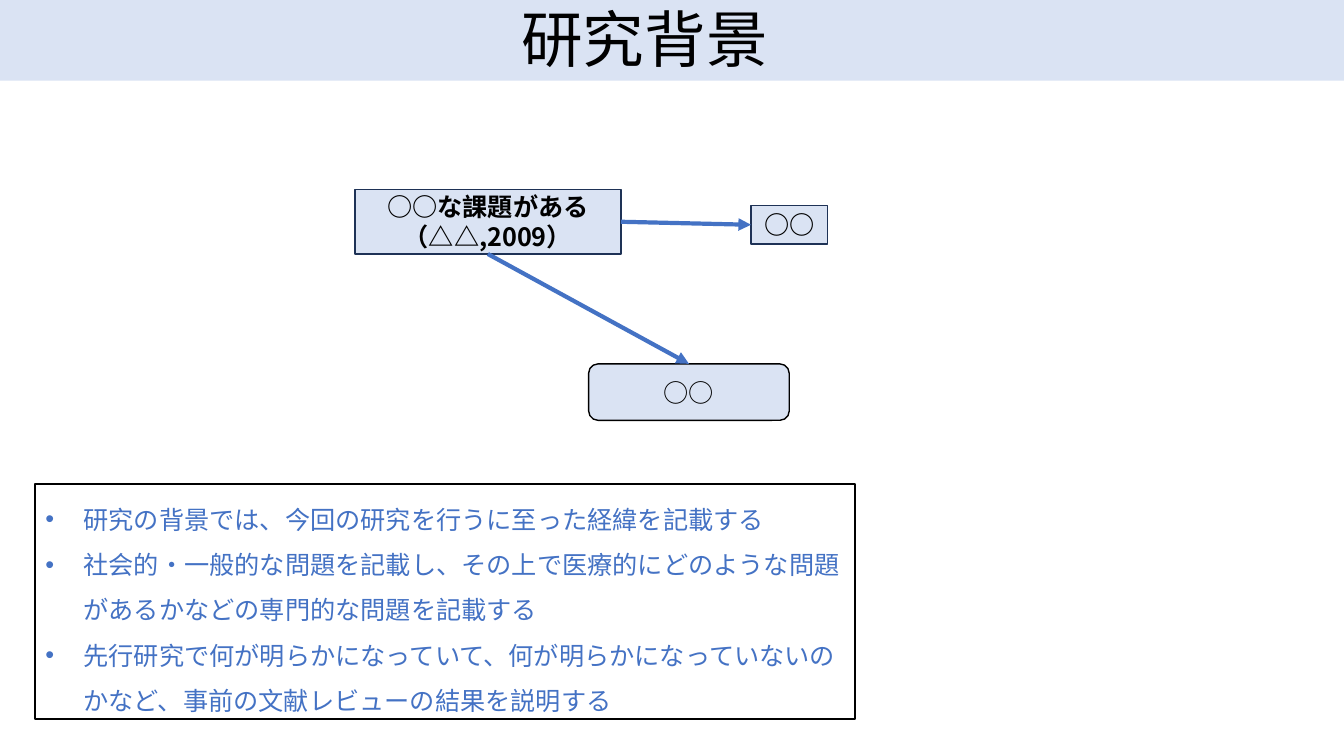
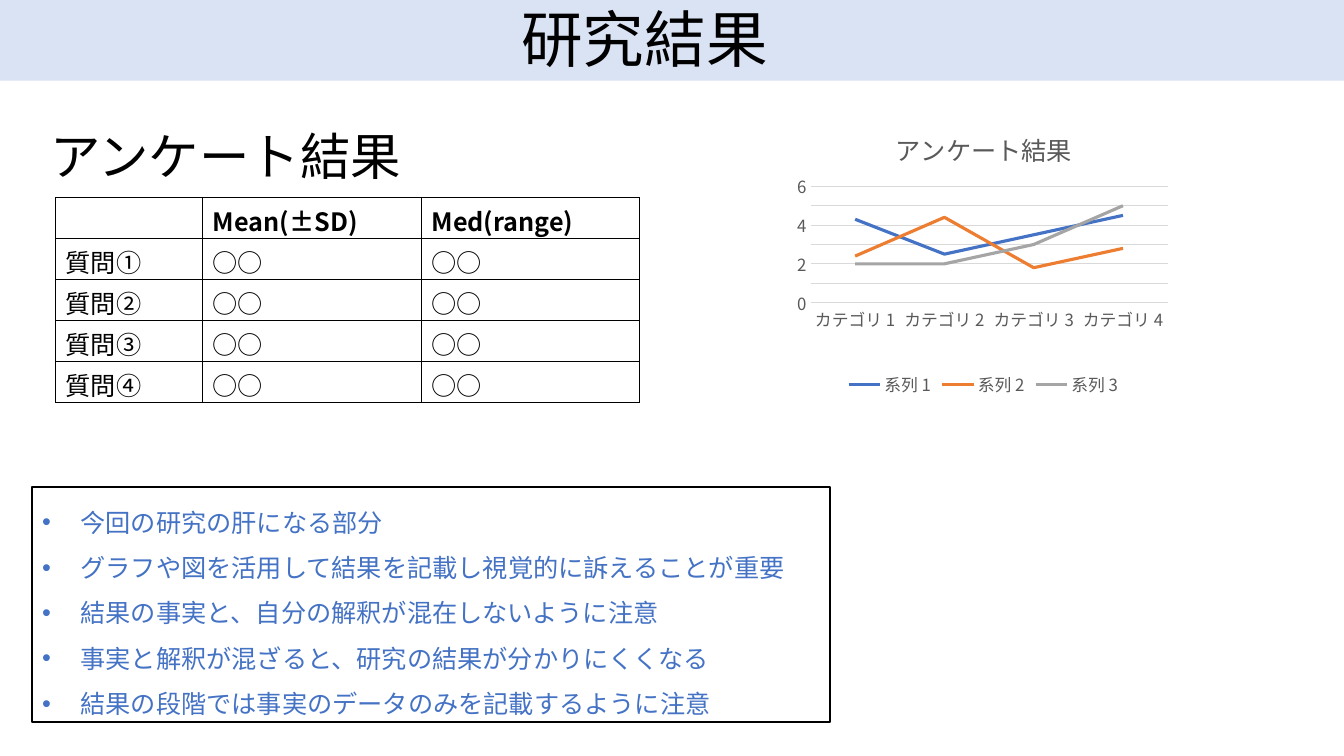
from lxml import etree
from pptx import Presentation
from pptx.chart.data import CategoryChartData
from pptx.dml.color import RGBColor
from pptx.enum.chart import XL_CHART_TYPE as CT, XL_LEGEND_POSITION as LP
from pptx.enum.chart import XL_MARKER_STYLE as MS, XL_TICK_MARK as TM
from pptx.enum.shapes import MSO_CONNECTOR as CONN, MSO_SHAPE as SHP
from pptx.enum.text import MSO_ANCHOR as ANC, MSO_AUTO_SIZE as AUTO, PP_ALIGN as AL
from pptx.oxml import parse_xml
from pptx.oxml.ns import nsdecls, qn
from pptx.util import Emu, Inches, Pt

FONT = "Noto Sans CJK JP"
C = {
    "pale": "DAE3F3", "navy": "1E3256", "blue": "4472C4", "orange": "ED7D31",
    "gray": "A5A5A5", "grid": "D9D9D9", "label": "595959",
    "black": "000000", "white": "FFFFFF",
}
W, H = Inches(13.333), Inches(7.5)
TOP, LEFT, BOTTOM, RIGHT = range(4)


def rgb(name):
    return RGBColor.from_string(C[name])


def share(x, y, w, h):
    return [Emu(round(n * full / 100)) for n, full in zip((x, y, w, h), (W, H, W, H))]


def set_font(font, size, color="black", bold=False):
    font.size, font.bold, font.name = Pt(size), bold, FONT
    font.color.rgb = rgb(color)


def set_line(line, color, width):
    line.color.rgb = rgb(color)
    line.width = Pt(width)


def style_text(tf, size, color="black", bold=False, align=AL.LEFT):
    for p in tf.paragraphs:
        p.alignment = align
        for r in p.runs:
            set_font(r.font, size, color, bold)
            ea = etree.SubElement(r.font._element, qn("a:ea"))
            ea.set("typeface", FONT)


def add_text(slide, at, text, size, color="black", align=AL.LEFT):
    sp = slide.shapes.add_textbox(*share(*at))
    tf = sp.text_frame
    tf.word_wrap = True
    tf.auto_size = AUTO.SHAPE_TO_FIT_TEXT
    tf.text = text
    style_text(tf, size, color, align=align)
    return sp


def add_box(slide, at, text="", kind=SHP.RECTANGLE, line=None, bold=False):
    sp = slide.shapes.add_shape(kind, *share(*at))
    sp.shadow.inherit = False
    sp.fill.solid()
    sp.fill.fore_color.rgb = rgb("pale")
    if line:
        set_line(sp.line, line, 1)
    else:
        sp.line.fill.background()
    tf = sp.text_frame
    tf.word_wrap = True
    tf.vertical_anchor = ANC.MIDDLE
    tf.text = text
    style_text(tf, 18, bold=bold, align=AL.CENTER)
    return sp


def add_arrow(slide, start, start_site, end, end_site):
    cx = slide.shapes.add_connector(CONN.STRAIGHT, 0, 0, 0, 0)
    cx.begin_connect(start, start_site)
    cx.end_connect(end, end_site)
    set_line(cx.line, "blue", 3)
    etree.SubElement(cx.line._get_or_add_ln(), qn("a:tailEnd")).set("type", "triangle")
    etree.SubElement(cx._element.spPr, qn("a:effectLst"))


def add_notes(slide, at, items):
    sp = add_text(slide, at, "\n".join(items), 18, "blue")
    set_line(sp.line, "black", 1.5)
    indent = Inches(0.38)
    for p in sp.text_frame.paragraphs:
        p.line_spacing = 1.5
        pPr = p._p.get_or_add_pPr()
        pPr.set("marL", str(indent))
        pPr.set("indent", str(-indent))
        etree.SubElement(pPr, qn("a:buFont")).set("typeface", "Arial")
        etree.SubElement(pPr, qn("a:buChar")).set("char", "•")


def style_cell(cell, text, bold):
    cell.text = text
    cell.margin_bottom = 0
    style_text(cell.text_frame, 18, bold=bold)
    tcPr = cell._tc.get_or_add_tcPr()
    for side in "LRTB":
        tcPr.append(parse_xml(
            f'<a:ln{side} {nsdecls("a")} w="{Pt(1)}"><a:solidFill>'
            f'<a:srgbClr val="{C["black"]}"/></a:solidFill></a:ln{side}>'))
    cell.fill.solid()
    cell.fill.fore_color.rgb = rgb("white")


def add_grid_table(slide, at, rows, col_shares):
    tbl = slide.shapes.add_table(len(rows), len(col_shares), *share(*at)).table
    for col, part in zip(tbl.columns, col_shares):
        col.width = Emu(round(W * part / 100))
    for i, row in enumerate(rows):
        for j, text in enumerate(row):
            style_cell(tbl.cell(i, j), text, bold=i == 0)


def place(parent, **edges):
    for old in parent.findall(qn("c:layout")):
        parent.remove(old)
    parts = "".join(f'<c:{k} val="{v}"/>' for k, v in edges.items())
    layout = parse_xml(f'<c:layout {nsdecls("c")}><c:manualLayout>{parts}'
                       '</c:manualLayout></c:layout>')
    tx = parent.find(qn("c:tx"))
    parent.insert(0 if tx is None else parent.index(tx) + 1, layout)


def add_line_chart(slide, at, title, cats, series):
    data = CategoryChartData()
    data.categories = cats
    for name, values, _ in series:
        data.add_series(name, values)
    chart = slide.shapes.add_chart(CT.LINE, *share(*at), data).chart
    set_font(chart.font, 12, "label")

    chart.has_title = True
    tf = chart.chart_title.text_frame
    tf.text = title
    style_text(tf, 18, "label", align=AL.CENTER)
    place(chart.chart_title._element, xMode="edge", yMode="edge", x=0.26, y=0.07)
    place(chart._chartSpace.chart.plotArea, layoutTarget="inner", xMode="edge",
          yMode="edge", x=0.05, y=0.28, w=0.93, h=0.39)

    chart.has_legend = True
    chart.legend.position = LP.BOTTOM
    chart.legend.include_in_layout = False
    set_font(chart.legend.font, 12, "label")

    cat, val = chart.category_axis, chart.value_axis
    for axis in (cat, val):
        axis.major_tick_mark = axis.minor_tick_mark = TM.NONE
        set_font(axis.tick_labels.font, 12, "label")
    set_line(cat.format.line, "grid", 0.75)
    val.format.line.fill.background()
    set_line(val.major_gridlines.format.line, "grid", 0.75)
    val.minimum_scale, val.maximum_scale, val.major_unit = 0, 6, 1

    chart.plots[0].vary_by_categories = False
    for s, (_, _, color) in zip(chart.plots[0].series, series):
        s.smooth = False
        s.marker.style = MS.NONE
        set_line(s.format.line, color, 2.25)


def new_slide(prs, title):
    slide = prs.slides.add_slide(prs.slide_layouts[6])
    add_box(slide, (0, 0, 100, 10.67))
    add_text(slide, (25.88, -0.5, 44.18, 11.2), title, 44, align=AL.CENTER)
    return slide


def build_background(prs):
    slide = new_slide(prs, "研究背景")
    issue = add_box(slide, (26.4, 25.07, 19.8, 8.53), "○○な課題がある（△△,2009）",
                    line="navy", bold=True)
    side = add_box(slide, (55.88, 27.2, 5.7, 5.07), "○○", line="navy", bold=True)
    below = add_box(slide, (43.8, 48.13, 14.93, 7.47), "○○",
                    SHP.ROUNDED_RECTANGLE, line="black")
    add_arrow(slide, issue, RIGHT, side, LEFT)
    add_arrow(slide, issue, BOTTOM, below, TOP)
    add_notes(slide, (2.63, 64, 60.98, 31.07), [
        "研究の背景では、今回の研究を行うに至った経緯を記載する",
        "社会的・一般的な問題を記載し、その上で医療的にどのような問題があるかなどの専門的な問題を記載する",
        "先行研究で何が明らかになっていて、何が明らかになっていないのかなど、事前の文献レビューの結果を説明する",
    ])


def build_results(prs):
    slide = new_slide(prs, "研究結果")
    heading = "アンケート結果"
    add_notes(slide, (2.4, 64.4, 59.33, 31.07), [
        "今回の研究の肝になる部分",
        "グラフや図を活用して結果を記載し視覚的に訴えることが重要",
        "結果の事実と、自分の解釈が混在しないように注意",
        "事実と解釈が混ざると、研究の結果が分かりにくくなる",
        "結果の段階では事実のデータのみを記載するように注意",
    ])
    add_text(slide, (3, 15.87, 34.2, 9.47), heading, 36)
    rows = [("", "Mean(±SD)", "Med(range)")]
    rows += [(f"質問{n}", "○○", "○○") for n in "➀②③④"]
    add_grid_table(slide, (4.13, 26.13, 43.43, 27.07), rows, (10.95, 16.28, 16.2))
    add_line_chart(slide, (58.88, 13.6, 28.58, 39.47), heading,
                   [f"カテゴリ {n}" for n in range(1, 5)], [
                       ("系列 1", (4.3, 2.5, 3.5, 4.5), "blue"),
                       ("系列 2", (2.4, 4.4, 1.8, 2.8), "orange"),
                       ("系列 3", (2, 2, 3, 5), "gray"),
                   ])


def main():
    prs = Presentation()
    prs.slide_width, prs.slide_height = W, H
    build_background(prs)
    build_results(prs)
    prs.save("out.pptx")


if __name__ == "__main__":
    main()
